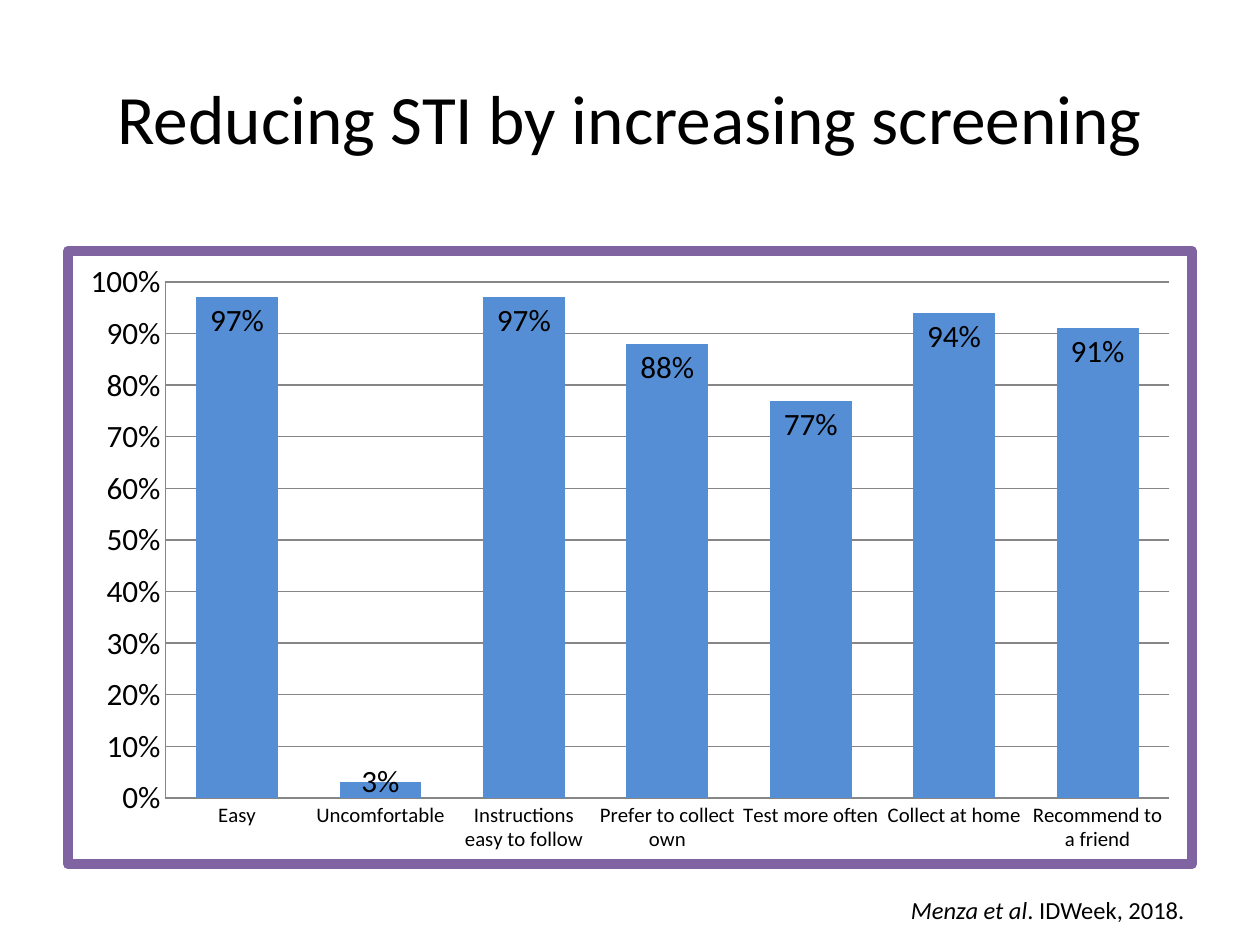
from dataclasses import dataclass

from pptx import Presentation
from pptx.chart.chart import Chart
from pptx.chart.data import CategoryChartData
from pptx.dml.color import RGBColor
from pptx.enum.chart import XL_CHART_TYPE, XL_LABEL_POSITION, XL_TICK_MARK
from pptx.enum.text import MSO_ANCHOR, PP_ALIGN
from pptx.oxml import parse_xml
from pptx.oxml.ns import nsdecls, qn
from pptx.util import Emu, Inches, Pt


@dataclass(frozen=True)
class Theme:
    font: str = "Calibri"
    text: RGBColor = RGBColor(0x00, 0x00, 0x00)
    bar: RGBColor = RGBColor(0x55, 0x8E, 0xD5)
    grid: RGBColor = RGBColor(0x86, 0x86, 0x86)
    frame: str = "8064A2"
    frame_pt: float = 6
    title_pt: float = 39.6
    chart_pt: float = 18
    category_pt: float = 12
    source_pt: float = 14


@dataclass(frozen=True)
class Answer:
    label: str
    share: float


THEME = Theme()
WIDTH, HEIGHT = Inches(10), Inches(7.5)
PERCENT = "0%"
ANSWERS = [
    Answer("Easy", 0.97),
    Answer("Uncomfortable", 0.03),
    Answer("Instructions easy to follow", 0.97),
    Answer("Prefer to collect own", 0.88),
    Answer("Test more often", 0.77),
    Answer("Collect at home", 0.94),
    Answer("Recommend to a friend", 0.91),
]


def box(left: float, top: float, width: float, height: float) -> tuple[Emu, ...]:
    """Turn shares of the slide's size into lengths."""
    return (Emu(int(left * WIDTH)), Emu(int(top * HEIGHT)),
            Emu(int(width * WIDTH)), Emu(int(height * HEIGHT)))


def style(font, size: float) -> None:
    font.name = THEME.font
    font.size = Pt(size)
    font.color.rgb = THEME.text


def add_run(p, text: str, size: float, italic: bool = False) -> None:
    r = p.add_run()
    r.text = text
    style(r.font, size)
    r.font.italic = italic


def add_title(s, text: str) -> None:
    sp = s.shapes.title
    sp.left, sp.top, sp.width, sp.height = box(0.05, 0.04, 0.9, 1 / 6)
    tf = sp.text_frame
    tf.vertical_anchor = MSO_ANCHOR.MIDDLE
    p = tf.paragraphs[0]
    p.alignment = PP_ALIGN.CENTER
    add_run(p, text, THEME.title_pt)


def frame_chart(chart: Chart) -> None:
    sp_pr = parse_xml(
        f'<c:spPr {nsdecls("c", "a")}><a:ln w="{Pt(THEME.frame_pt)}"><a:solidFill>'
        f'<a:srgbClr val="{THEME.frame}"/></a:solidFill><a:round/></a:ln></c:spPr>')
    chart.element.find(qn("c:txPr")).addprevious(sp_pr)


def lift_label(chart: Chart, index: int, share: float) -> None:
    """Raise one bar's label by a share of the chart's height."""
    label = chart.plots[0].series[0].points[index].data_label
    label.position = XL_LABEL_POSITION.INSIDE_END
    idx = chart.element.find(f'.//{qn("c:dLbl")}/{qn("c:idx")}[@val="{index}"]')
    idx.addnext(parse_xml(
        f'<c:layout {nsdecls("c")}><c:manualLayout><c:x val="0"/>'
        f'<c:y val="{-share}"/></c:manualLayout></c:layout>'))


def add_answer_chart(s, answers: list[Answer]) -> None:
    data = CategoryChartData(number_format=PERCENT)
    data.categories = [a.label for a in answers]
    data.add_series("Series 1", [a.share for a in answers])
    chart = s.shapes.add_chart(XL_CHART_TYPE.COLUMN_CLUSTERED,
                               *box(0.05, 0.26, 0.9, 0.66), data).chart
    chart.has_legend = chart.has_title = False
    style(chart.font, THEME.chart_pt)
    frame_chart(chart)

    plot = chart.plots[0]
    plot.gap_width, plot.overlap, plot.vary_by_categories = 75, 40, False
    series = plot.series[0]
    series.format.fill.solid()
    series.format.fill.fore_color.rgb = THEME.bar
    labels = series.data_labels
    labels.show_value = True
    labels.position = XL_LABEL_POSITION.INSIDE_END
    labels.number_format, labels.number_format_is_linked = PERCENT, False
    style(labels.font, THEME.chart_pt)
    lift_label(chart, 1, 0.04)

    values, categories = chart.value_axis, chart.category_axis
    values.minimum_scale, values.maximum_scale, values.major_unit = 0, 1, 0.1
    values.tick_labels.number_format = PERCENT
    values.tick_labels.number_format_is_linked = False
    values.has_major_gridlines = True
    style(categories.tick_labels.font, THEME.category_pt)
    for axis in (values, categories):
        axis.major_tick_mark = axis.minor_tick_mark = XL_TICK_MARK.NONE
    for part in (values, categories, values.major_gridlines):
        part.format.line.color.rgb = THEME.grid
        part.format.line.width = Pt(0.75)


def add_source(s) -> None:
    tf = s.shapes.add_textbox(*box(0.62, 0.94, 0.33, 0.045)).text_frame
    tf.word_wrap = True
    p = tf.paragraphs[0]
    p.alignment = PP_ALIGN.RIGHT
    add_run(p, "Menza et al", THEME.source_pt, italic=True)
    add_run(p, ". IDWeek, 2018.", THEME.source_pt)


def main() -> None:
    prs = Presentation()
    prs.slide_width, prs.slide_height = WIDTH, HEIGHT
    s = prs.slides.add_slide(prs.slide_layouts[5])
    add_title(s, "Reducing STI by increasing screening")
    add_answer_chart(s, ANSWERS)
    add_source(s)
    prs.save("out.pptx")


if __name__ == "__main__":
    main()
